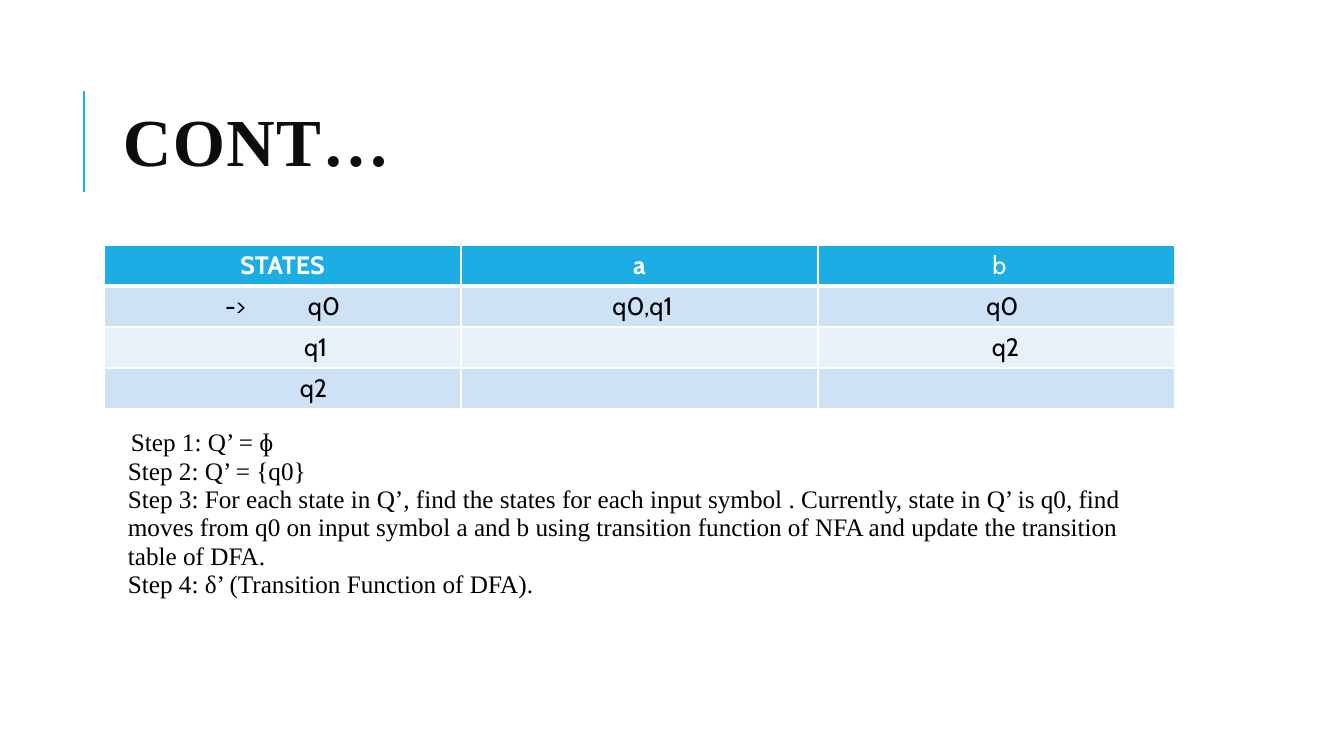
import pptx
import pptx.util
import pptx.dml.color
import pptx.enum.shapes
import pptx.enum.text
import pptx.oxml.ns
from lxml import etree

RGB = pptx.dml.color.RGBColor
ALIGN = pptx.enum.text.PP_ALIGN
ANCHOR = pptx.enum.text.MSO_ANCHOR
qn = pptx.oxml.ns.qn

BLUE = RGB(0x1C, 0xAD, 0xE4)
BAND_DARK = RGB(0xCD, 0xE3, 0xF5)
BAND_LIGHT = RGB(0xE8, 0xF1, 0xFA)
WHITE = RGB(0xFF, 0xFF, 0xFF)
BLACK = RGB(0, 0, 0)
INK = RGB(0x0D, 0x0D, 0x0D)
SERIF = "Times New Roman"
SANS = "Cabin"
COL_W, ROW_H, CELL_PAD = 357, 41, 10

# Each cell: text, shift of its centre to the right
ROWS = [
    [("STATES", 0), ("a", 0), ("b", 3)],
    [("->\tq0", 0), ("q0,q1", 3), ("q0", 6)],
    [("q1", 33), ("", 0), ("q2", 9)],
    [("q2", 31), ("", 0), ("", 0)],
]
STEPS = [
    "Step 1: Q’ = ɸ",
    "Step 2: Q’ = {q0}",
    "Step 3: For each state in Q’, find the states for each input symbol . "
    "Currently, state in Q’ is q0, find moves from q0 on input symbol a and b "
    "using transition function of NFA and update the transition table of DFA.",
    "Step 4: δ’ (Transition Function of DFA).",
]


def px(n):
    return pptx.util.Emu(round(n * 914400 / 100.8))


def write(p, text, size=18, font=SERIF, color=BLACK, bold=False,
          align=ALIGN.LEFT, line=1.0, spacing=0, indent=0):
    p.alignment = align
    p.line_spacing = line
    if indent:
        p._p.get_or_add_pPr().set("indent", str(px(indent)))
    r = p.add_run()
    r.text = text
    r.font.size = pptx.util.Pt(size)
    r.font.name = font
    r.font.bold = bold
    r.font.color.rgb = color
    if spacing:
        r._r.get_or_add_rPr().set("spc", str(spacing * 100))


def add_text_box(s, x, y, w, h, anchor=ANCHOR.TOP):
    tf = s.shapes.add_textbox(px(x), px(y), px(w), px(h)).text_frame
    tf.word_wrap = True
    tf.vertical_anchor = anchor
    tf.margin_left = tf.margin_right = tf.margin_top = tf.margin_bottom = 0
    return tf


def add_rule(s, x1, y1, x2, y2):
    c = s.shapes.add_connector(pptx.enum.shapes.MSO_CONNECTOR.STRAIGHT,
                               px(x1), px(y1), px(x2), px(y2))
    c.line.color.rgb = BLUE
    c.line.width = pptx.util.Pt(1.5)
    etree.SubElement(c._element.spPr, qn("a:effectLst"))


def set_borders(cell, top, bottom):
    tcPr = cell._tc.get_or_add_tcPr()
    for tag, width in (("lnL", 1), ("lnR", 1), ("lnT", top), ("lnB", bottom)):
        ln = etree.SubElement(tcPr, qn("a:" + tag), w=str(pptx.util.Pt(width)))
        fill = etree.SubElement(ln, qn("a:solidFill"))
        etree.SubElement(fill, qn("a:srgbClr"), val=str(WHITE))


def add_tab_stop(p, pos):
    tabs = etree.SubElement(p._p.get_or_add_pPr(), qn("a:tabLst"))
    etree.SubElement(tabs, qn("a:tab"), pos=str(px(pos)), algn="l")


def add_states_table(s, x, y):
    n_rows, n_cols = len(ROWS), len(ROWS[0])
    table = s.shapes.add_table(n_rows, n_cols, px(x), px(y),
                               px(n_cols * COL_W), px(n_rows * ROW_H)).table
    table.horz_banding = False
    for col in table.columns:
        col.width = px(COL_W)
    for i, row in enumerate(ROWS):
        table.rows[i].height = px(ROW_H)
        for j, (text, shift) in enumerate(row):
            cell = table.cell(i, j)
            set_borders(cell, top=3 if i == 1 else 1, bottom=3 if i == 0 else 1)
            cell.fill.solid()
            cell.fill.fore_color.rgb = (
                BLUE if i == 0 else BAND_DARK if i % 2 else BAND_LIGHT)
            cell.margin_left = px(CELL_PAD + 2 * shift)
            cell.margin_right = px(CELL_PAD)
            if not text:
                continue
            p = cell.text_frame.paragraphs[0]
            start_state = "\t" in text
            write(p, text, font=SANS, color=BLACK if i else WHITE,
                  bold=i == 0 and j < 2,
                  align=ALIGN.LEFT if start_state else ALIGN.CENTER)
            if start_state:
                cell.margin_left = px(121)
                add_tab_stop(p, 83)


def main():
    prs = pptx.Presentation()
    prs.slide_width, prs.slide_height = px(1344), px(756)
    s = prs.slides.add_slide(prs.slide_layouts[6])

    # Title with its accent rule
    add_rule(s, 84, 192, 84, 91)
    tf = add_text_box(s, 123, 64, 1052, 166, anchor=ANCHOR.MIDDLE)
    write(tf.paragraphs[0], "CONT…", size=48, color=INK, bold=True,
          line=0.8, spacing=1)

    # Steps
    tf = add_text_box(s, 128, 429, 1035, 170)
    for i, step in enumerate(STEPS):
        p = tf.add_paragraph() if i else tf.paragraphs[0]
        write(p, step, line=0.94, indent=0 if i else 3)

    # Transition table
    add_states_table(s, 104, 245)

    prs.save("out.pptx")


if __name__ == "__main__":
    main()
